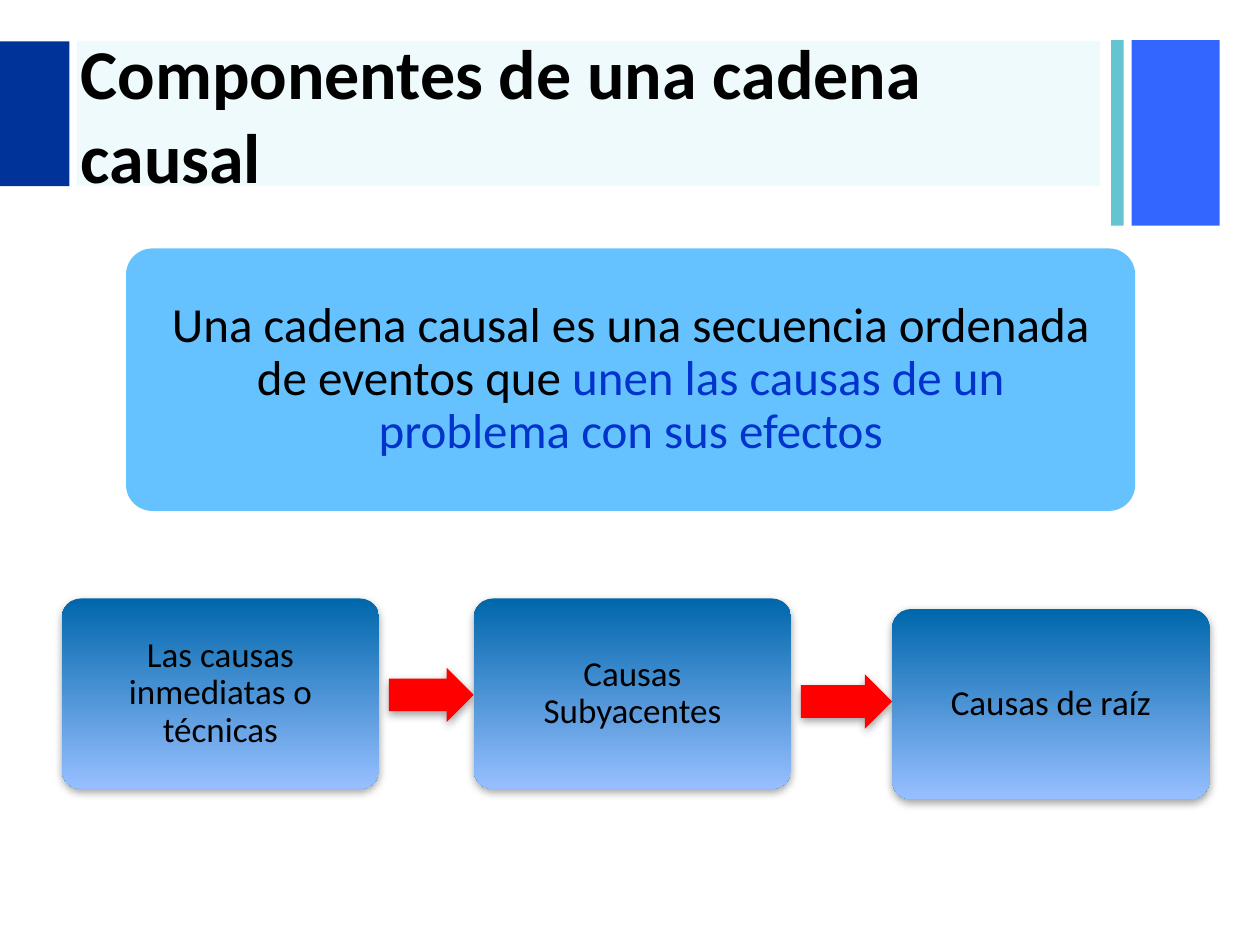
from lxml.etree import SubElement
from pptx import Presentation
from pptx.dml.color import RGBColor
from pptx.enum.shapes import MSO_SHAPE
from pptx.enum.text import MSO_ANCHOR, MSO_AUTO_SIZE, PP_ALIGN
from pptx.oxml.ns import qn
from pptx.util import Pt

THEME = {
    "font": "Calibri", "title": 40, "statement": 28, "card": 20,
    "text": "000000", "accent": "0033CC", "statement_fill": "66C2FF",
    "card_top": "0067AB", "card_bottom": "97BFFF", "arrow": "FF0000",
    "shadow": "808080",
}

TITLE = "Componentes de una cadena causal"
STATEMENT = [
    ("Una cadena causal es una secuencia ordenada de eventos que ", "text"),
    ("unen las causas de un problema con sus efectos", "accent"),
]
# label, left, top
CARDS = [
    ("Las causas inmediatas o técnicas", 35.3, 342),
    ("Causas Subyacentes", 270.7, 342),
    ("Causas de raíz", 509.8, 348),
]
# left, top, width, height, colour, opacity in %
BANDS = [
    (646.6, 23, 50.4, 106, "3366FF", 100),
    (635, 23, 7.2, 106, "65C4D2", 100),
    (43.9, 23.4, 584.8, 82.8, "14C5D0", 7),
    (0, 23.6, 39.6, 82.8, "003399", 100),
]
TITLE_BOX = (38.9, 24.5, 595.4, 80.6)
STATEMENT_BOX = (72, 142, 576.7, 150)
CARD_W, CARD_H = 181.4, 108.7
ARROW_H, ARROW_GAP = 31, 5.5
ARROW_TOPS = (381.6, 385.4)


def rgb(value):
    return RGBColor.from_string(value)


def add_shape(s, kind, box, color=None, adjustments=()):
    sp = s.shapes.add_shape(kind, *map(Pt, box))
    sp.shadow.inherit = False
    sp.line.fill.background()
    if color:
        sp.fill.solid()
        sp.fill.fore_color.rgb = rgb(color)
    for i, value in enumerate(adjustments):
        sp.adjustments[i] = value
    return sp


def set_opacity(sp, percent):
    color = sp.fill._xPr.find(qn("a:solidFill"))[0]
    SubElement(color, qn("a:alpha"), val=str(percent * 1000))


def add_shadow(sp):
    effects = sp._element.spPr.find(qn("a:effectLst"))
    shadow = SubElement(effects, qn("a:outerShdw"), blurRad=str(Pt(5)),
                        dist=str(Pt(2)), dir="5400000", rotWithShape="0")
    color = SubElement(shadow, qn("a:srgbClr"), val=THEME["shadow"])
    SubElement(color, qn("a:alpha"), val="75000")


def set_font(r, size, color, bold=False):
    r.font.name = THEME["font"]
    r.font.size = Pt(THEME[size])
    r.font.color.rgb = rgb(THEME[color])
    r.font.bold = bold


def write(sp, parts, size, margin):
    """Centre one paragraph made of (text, colour) parts."""
    tf = sp.text_frame
    tf.word_wrap = True
    tf.vertical_anchor = MSO_ANCHOR.MIDDLE
    tf.margin_left = tf.margin_right = Pt(margin)
    tf.margin_top = tf.margin_bottom = Pt(margin)
    p = tf.paragraphs[0]
    p.alignment = PP_ALIGN.CENTER
    p.line_spacing = 0.9
    for text, color in parts:
        r = p.add_run()
        r.text = text
        set_font(r, size, color)


def add_title(s):
    title = s.shapes.title
    s.shapes._spTree.append(title._element)  # in front of the bands
    title.left, title.top, title.width, title.height = map(Pt, TITLE_BOX)
    tf = title.text_frame
    tf.text = TITLE
    tf.word_wrap = True
    tf.auto_size = MSO_AUTO_SIZE.NONE
    tf.vertical_anchor = MSO_ANCHOR.MIDDLE
    p = tf.paragraphs[0]
    p.alignment = PP_ALIGN.LEFT
    set_font(p.runs[0], "title", "text", bold=True)


def add_card(s, label, left, top):
    sp = add_shape(s, MSO_SHAPE.ROUNDED_RECTANGLE,
                   (left, top, CARD_W, CARD_H), adjustments=[0.1])
    sp.fill.gradient()
    sp.fill.gradient_angle = 270
    stops = zip(sp.fill.gradient_stops, (0, 1), ("card_top", "card_bottom"))
    for stop, position, color in stops:
        stop.position = position
        stop.color.rgb = rgb(THEME[color])
    add_shadow(sp)
    write(sp, [(label, "text")], "card", 8.3)


def main():
    prs = Presentation()
    prs.slide_width, prs.slide_height = Pt(720), Pt(540)
    s = prs.slides.add_slide(prs.slide_layouts[5])

    for *box, color, opacity in BANDS:
        sp = add_shape(s, MSO_SHAPE.RECTANGLE, box, color)
        if opacity < 100:
            set_opacity(sp, opacity)
    add_title(s)

    sp = add_shape(s, MSO_SHAPE.ROUNDED_RECTANGLE, STATEMENT_BOX,
                   THEME["statement_fill"], [0.1])
    write(sp, STATEMENT, "statement", 19.5)

    for card in CARDS:
        add_card(s, *card)
    for (_, left, _), (_, end, _), top in zip(CARDS, CARDS[1:], ARROW_TOPS):
        start = left + CARD_W + ARROW_GAP
        sp = add_shape(s, MSO_SHAPE.RIGHT_ARROW,
                       (start, top, end - start, ARROW_H),
                       THEME["arrow"], [0.6, 0.5])
        add_shadow(sp)

    prs.save("out.pptx")


if __name__ == "__main__":
    main()
